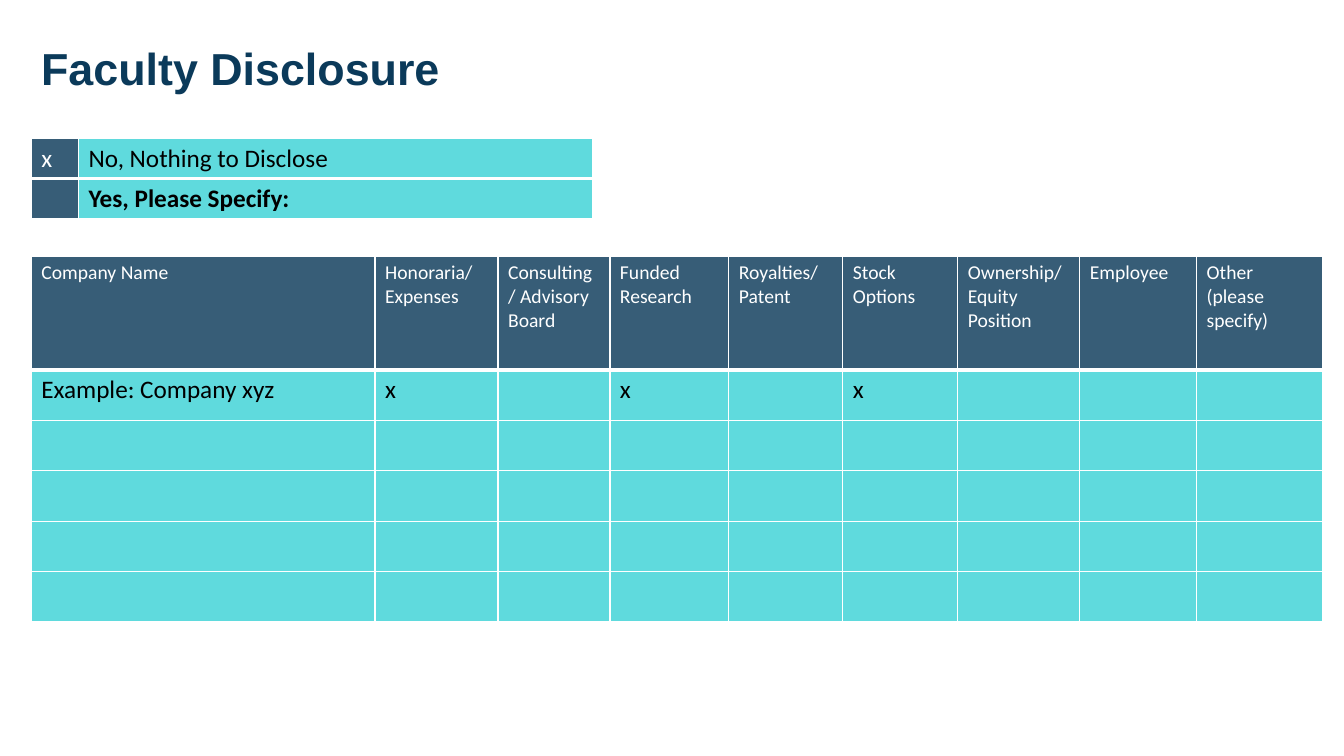
from lxml import etree
from pptx import Presentation
from pptx import util as u
from pptx.dml.color import RGBColor
from pptx.enum import text
from pptx.oxml.ns import qn

NAVY, TEAL, WHITE, BLACK = "0B3A5A", "22CCD0", "FFFFFF", "000000"


def rgb(value):
    return RGBColor.from_string(value)


def add_run(p, words, font, size, color, bold=False):
    r = p.add_run()
    r.text = words
    r.font.name = font
    r.font.size = u.Pt(size)
    r.font.color.rgb = rgb(color)
    r.font.bold = bold


def set_borders(cell, bottom):
    tcPr = cell._tc.get_or_add_tcPr()
    for side, width in (("L", 1), ("R", 1), ("T", 1), ("B", bottom)):
        ln = etree.SubElement(tcPr, qn(f"a:ln{side}"), w=str(u.Pt(width)))
        fill = etree.SubElement(ln, qn("a:solidFill"))
        etree.SubElement(fill, qn("a:srgbClr"), val=WHITE)


def set_fill(cell, color, opacity):
    cell.fill.solid()
    cell.fill.fore_color.rgb = rgb(color)
    clr = cell._tc.tcPr.find(qn("a:solidFill")).find(qn("a:srgbClr"))
    etree.SubElement(clr, qn("a:alpha"), val=str(opacity * 1000))


def fill_cell(cell, words, dark, size, bold=False, bottom=1):
    set_borders(cell, bottom)
    set_fill(cell, *((NAVY, 82) if dark else (TEAL, 72)))
    if not words:
        return
    tf = cell.text_frame
    for i, line in enumerate(words.split("\n")):
        p = tf.add_paragraph() if i else tf.paragraphs[0]
        add_run(p, line, "Calibri", size, WHITE if dark else BLACK, bold)


def add_grid(s, x, y, widths, heights):
    frame = s.shapes.add_table(len(heights), len(widths), u.Inches(x), u.Inches(y),
                               u.Inches(sum(widths)), u.Inches(sum(heights)))
    table = frame.table
    table.first_row = table.horz_banding = False
    for column, width in zip(table.columns, widths):
        column.width = u.Inches(width)
    for row, height in zip(table.rows, heights):
        row.height = u.Inches(height)
    return table


def add_title(s, x, y, w, h):
    sp = s.shapes.add_textbox(u.Inches(x), u.Inches(y), u.Inches(w), u.Inches(h))
    tf = sp.text_frame
    tf.word_wrap = True
    tf.vertical_anchor = text.MSO_ANCHOR.MIDDLE
    p = tf.paragraphs[0]
    p.line_spacing = 0.9
    add_run(p, "Faculty Disclosure", "Arial", 32, NAVY, True)


def add_answers(s, x, y):
    answers = [("x", "No, Nothing to Disclose"), ("", "Yes, Please Specify:")]
    table = add_grid(s, x, y, [0.47, 5.1], [0.4] * len(answers))
    for i, (mark, answer) in enumerate(answers):
        bottom = 1 if i else 3
        fill_cell(table.cell(i, 0), mark, True, 18, bottom=bottom)
        fill_cell(table.cell(i, 1), answer, False, 18, bold=i == 1, bottom=bottom)


def add_disclosures(s, x, y):
    columns = [("Company Name", 3.41), ("Honoraria/\nExpenses", 1.22),
               ("Consulting/ Advisory Board", 1.11), ("Funded Research", 1.18),
               ("Royalties/ Patent", 1.13), ("Stock Options", 1.14),
               ("Ownership/ Equity Position", 1.21), ("Employee", 1.16),
               ("Other\n(please specify)", 1.25)]
    example = {0: "Example: Company xyz", 1: "x", 3: "x", 5: "x"}
    body_rows = 5
    table = add_grid(s, x, y, [width for _, width in columns],
                     [1.13] + [0.5] * body_rows)
    for c, (heading, _) in enumerate(columns):
        fill_cell(table.cell(0, c), heading, True, 14, bottom=3)
        for r in range(1, body_rows + 1):
            words = example.get(c, "") if r == 1 else ""
            fill_cell(table.cell(r, c), words, False, 18)


def main():
    prs = Presentation()
    prs.slide_width, prs.slide_height = u.Inches(13.33), u.Inches(7.5)
    s = prs.slides.add_slide(prs.slide_layouts[6])
    left = 0.31
    add_title(s, left, 0.26, 11.04, 0.88)
    add_answers(s, left, 1.37)
    add_disclosures(s, left, 2.54)
    prs.save("out.pptx")


if __name__ == "__main__":
    main()
